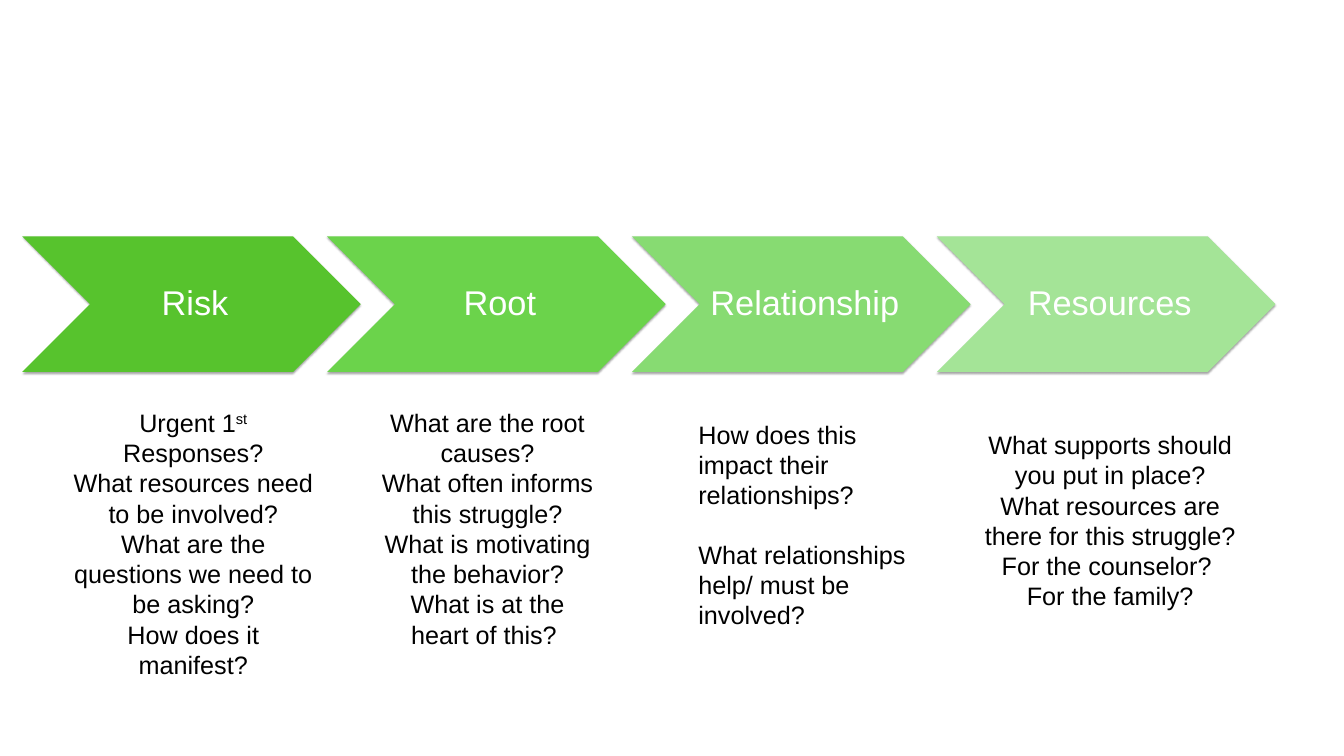
from lxml import etree
from pptx import Presentation
from pptx.dml.color import RGBColor as RGB
from pptx.enum.shapes import MSO_SHAPE as Shape
from pptx.enum.text import MSO_ANCHOR as Anchor, MSO_AUTO_SIZE as Auto, PP_ALIGN as Align
from pptx.oxml import parse_xml
from pptx.oxml.ns import nsdecls
from pptx.util import Inches, Pt

# Content: name, fill, notes box (left, top, width, height), align, gap, notes
# "^" marks off raised text
STEPS = [
    ("Risk", "57C32D", (1.33, 8.03, 5.01, 5.55), Align.CENTER, 0, [
        "Urgent 1^st^ Responses?",
        "What resources need to be involved?",
        "What are the questions we need to be asking?",
        "How does it manifest?"]),
    ("Root", "6BD34B", (7.41, 8.03, 4.53, 5.55), Align.CENTER, 0, [
        "What are the root causes?",
        "What often informs this struggle?",
        "What is motivating the behavior?",
        "What is at the heart of this? "]),
    ("Relationship", "87DB72", (13.76, 8.27, 4.53, 4.34), Align.LEFT, 41.4, [
        "How does this impact their relationships?",
        "What relationships help/ must be involved?"]),
    ("Resources", "A4E497", (19.22, 8.47, 5.62, 4.95), Align.CENTER, 0, [
        "What supports should you put in place?",
        "What resources are there for this struggle?",
        "For the counselor? ",
        "For the family?"]),
]

THEME = {
    "head": {"name": "Arial", "size": Pt(49), "color": "FFFFFF"},
    "note": {"name": "Arial", "size": Pt(36), "color": "000000"},
}
SHADE = (f'<a:outerShdw {nsdecls("a")} blurRad="{Pt(3.1)}" dist="{Pt(1.8)}" '
         'dir="5400000" rotWithShape="0"><a:srgbClr val="000000">'
         '<a:alpha val="35000"/></a:srgbClr></a:outerShdw>')
LEFT, TOP, WIDE, HIGH, STEP = 0.44, 4.69, 6.72, 2.69, 6.05


def put(obj, vals):
    for key, val in vals.items():
        setattr(obj, key, val)


def style(font, look):
    put(font, {k: v for k, v in look.items() if k != "color"})
    font.color.rgb = RGB.from_string(look["color"])


def add_step(group, num, name, fill):
    box = map(Inches, (LEFT + num * STEP, TOP, WIDE, HIGH))
    step = group.shapes.add_shape(Shape.CHEVRON, *box)
    step.fill.solid()
    step.fill.fore_color.rgb = RGB.from_string(fill)
    step.line.fill.background()
    step.shadow.inherit = False
    step.element.spPr.find("{*}effectLst").append(parse_xml(SHADE))
    frame = step.text_frame
    put(frame, {"word_wrap": True, "vertical_anchor": Anchor.MIDDLE,
                "margin_left": Inches(0.21), "margin_right": Inches(0.07),
                "margin_top": Inches(0.07), "margin_bottom": Inches(0.07)})
    para = frame.paragraphs[0]
    put(para, {"alignment": Align.CENTER, "line_spacing": 0.9})
    run = para.add_run()
    run.text = name
    style(run.font, THEME["head"])


def add_notes(slide, box, align, gap, notes):
    frame = slide.shapes.add_textbox(*map(Inches, box)).text_frame
    put(frame, {"word_wrap": True, "auto_size": Auto.SHAPE_TO_FIT_TEXT})
    for num, note in enumerate(notes):
        para = frame.add_paragraph() if num else frame.paragraphs[0]
        para.alignment = align
        if num and gap:
            para.space_before = Pt(gap)
        for part, text in enumerate(note.split("^")):
            run = para.add_run()
            run.text = text
            style(run.font, THEME["note"])
            if part % 2:
                run._r.get_or_add_rPr().set("baseline", "30000")


def main():
    deck = Presentation()
    put(deck, {"slide_width": Inches(26.67), "slide_height": Inches(15)})
    slide = deck.slides.add_slide(deck.slide_layouts[6])

    # Row of chevrons, then the notes under each
    group = slide.shapes.add_group_shape()
    for num, (name, fill, *rest) in enumerate(STEPS):
        add_step(group, num, name, fill)
        add_notes(slide, *rest)
    deck.save("out.pptx")


if __name__ == "__main__":
    main()
